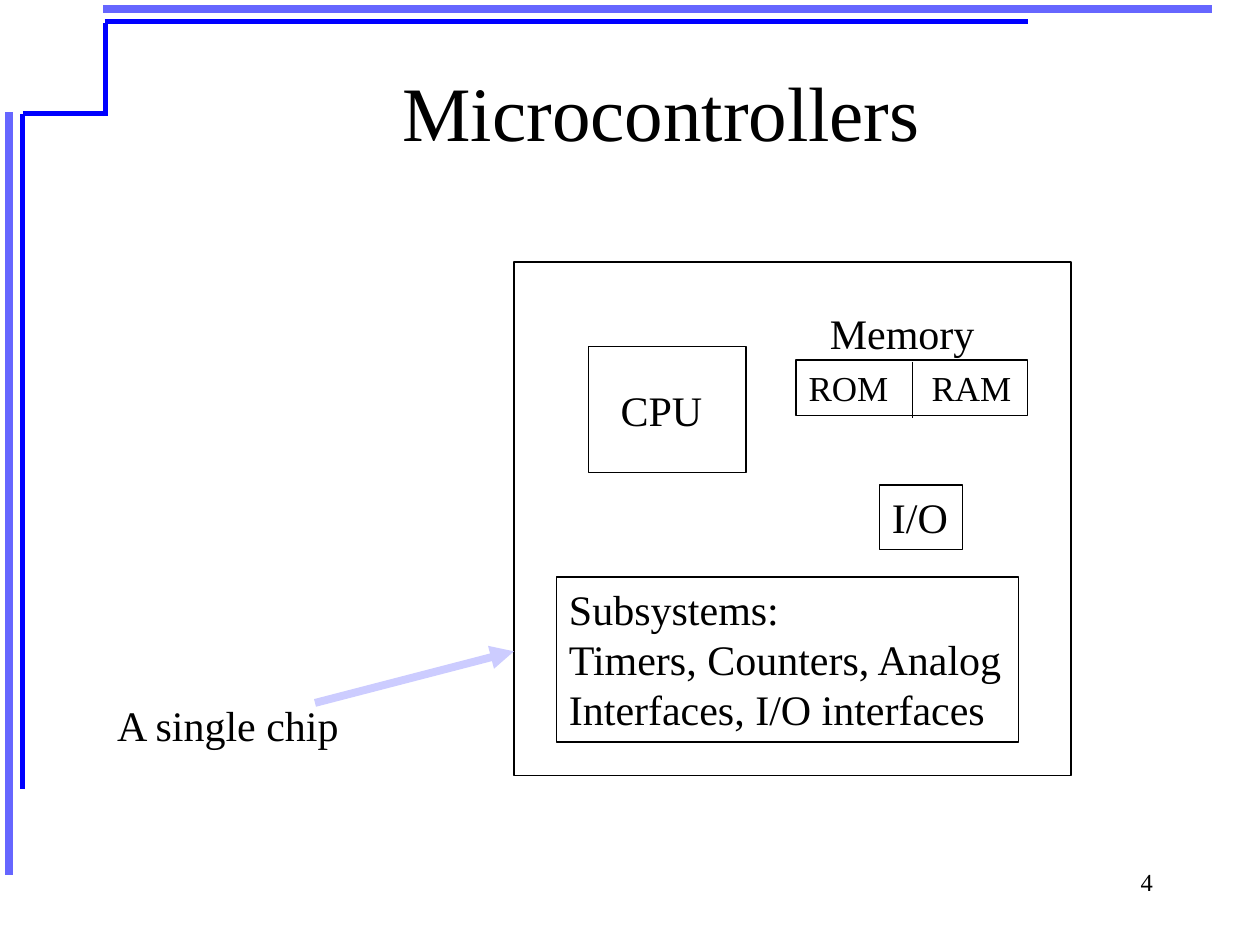
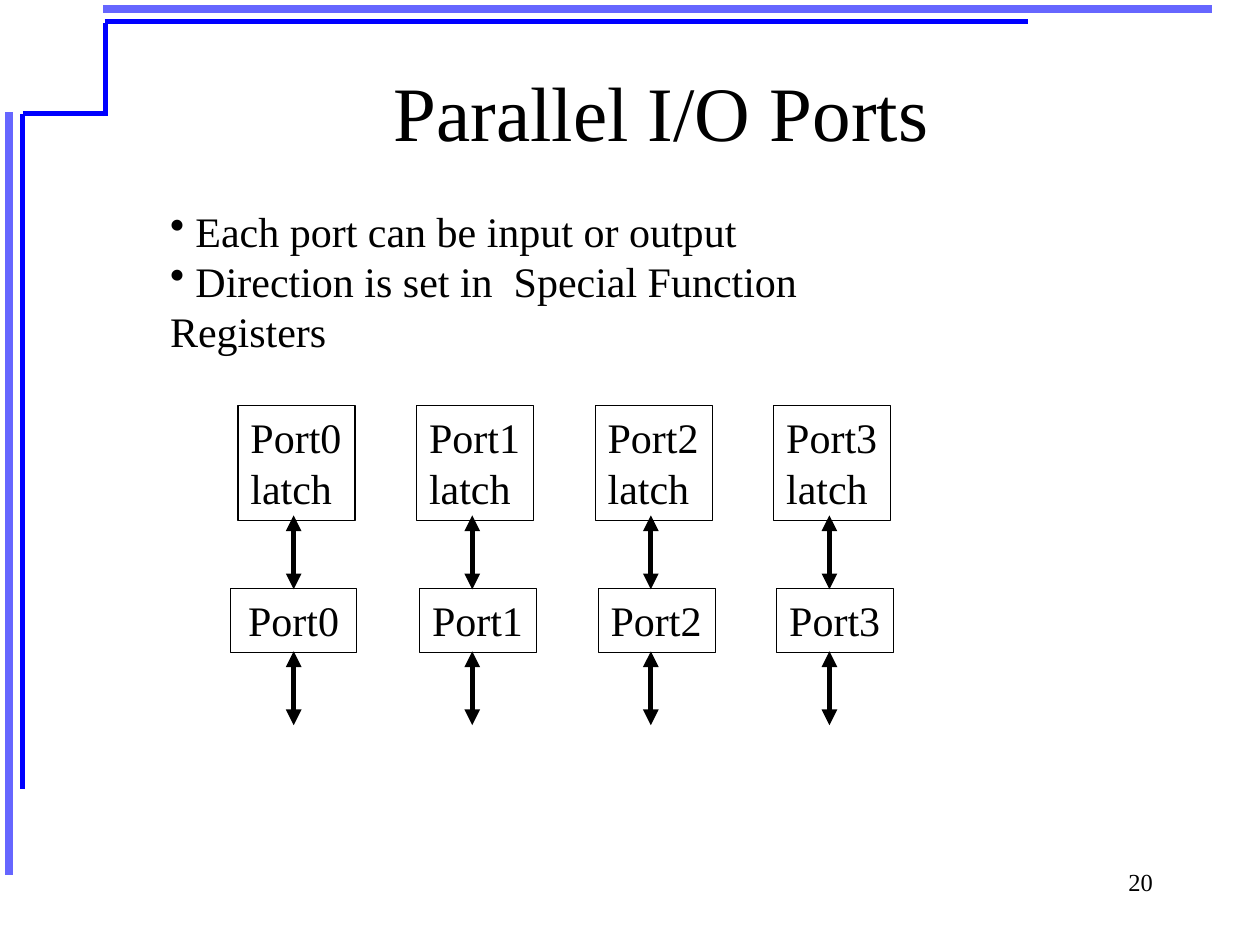
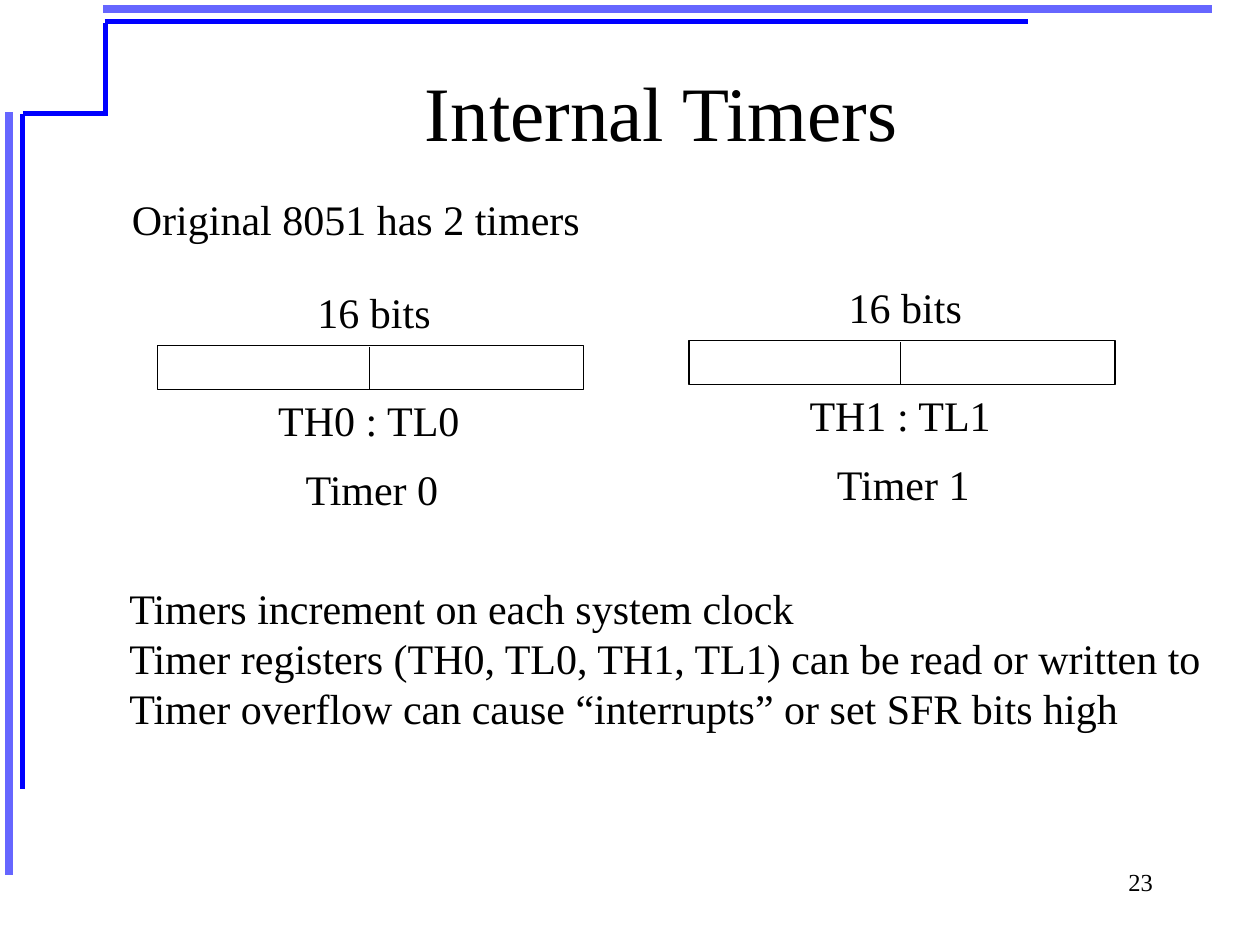
from lxml import etree
from pptx import Presentation
from pptx import util as u
from pptx.dml.color import RGBColor
from pptx.enum import shapes, text
from pptx.oxml import ns

BLACK = RGBColor(0x00, 0x00, 0x00)
BLUE = RGBColor(0x00, 0x00, 0xFF)
PERIWINKLE = RGBColor(0x66, 0x66, 0xFF)
LAVENDER = RGBColor(0xCC, 0xCC, 0xFF)
FONT = "Times New Roman"
LEFT, CENTER, RIGHT = text.PP_ALIGN.LEFT, text.PP_ALIGN.CENTER, text.PP_ALIGN.RIGHT

FRAME = [
    ((0.18, 2.26), (0.18, 17.63), PERIWINKLE, 4.5),
    ((2.08, 0.18), (24.43, 0.18), PERIWINKLE, 4.5),
    ((0.46, 2.29), (0.46, 15.9), BLUE, 3),
    ((2.11, 0.43), (20.73, 0.43), BLUE, 3),
    ((0.46, 2.29), (2.16, 2.29), BLUE, 3),
    ((2.13, 2.34), (2.13, 0.46), BLUE, 3),
]


def assign(target, values):
    for attribute, value in values.items():
        setattr(target, attribute, value)


def draw_line(slide, start, end, color=BLACK, weight=0.75, arrows=()):
    ends = [u.Cm(value) for value in (*start, *end)]
    connector = slide.shapes.add_connector(shapes.MSO_CONNECTOR.STRAIGHT, *ends)
    connector.line.width = u.Pt(weight)
    connector.line.color.rgb = color
    properties = connector.element.spPr
    outline = properties.find(ns.qn("a:ln"))
    for arrow in arrows:
        etree.SubElement(outline, ns.qn(f"a:{arrow}"), type="triangle")
    etree.SubElement(properties, ns.qn("a:effectLst"))
    return connector


def draw_rectangle(slide, box):
    rectangle = slide.shapes.add_shape(
        shapes.MSO_SHAPE.RECTANGLE, *[u.Cm(value) for value in box])
    rectangle.shadow.inherit = False
    rectangle.fill.background()
    rectangle.line.width = u.Pt(0.75)
    rectangle.line.color.rgb = BLACK
    return rectangle


def set_text(frame, lines, size=24, align=LEFT, wrap=False,
             anchor=text.MSO_ANCHOR.TOP, bullet=None, tab=None):
    assign(frame, {"text": "\n".join(lines), "word_wrap": wrap, "vertical_anchor": anchor})
    for paragraph in frame.paragraphs:
        paragraph.alignment = align
        properties = paragraph._p.get_or_add_pPr()
        if bullet:
            etree.SubElement(properties, ns.qn("a:buChar"), char=bullet)
        if tab:
            stops = etree.SubElement(properties, ns.qn("a:tabLst"))
            etree.SubElement(stops, ns.qn("a:tab"), pos=str(u.Cm(tab)), algn="l")
        assign(paragraph.font, {"name": FONT, "size": u.Pt(size)})
        paragraph.font.color.rgb = BLACK


def add_label(slide, box, *lines, **style):
    label = slide.shapes.add_textbox(*[u.Cm(value) for value in box])
    set_text(label.text_frame, lines, **style)


def add_block(slide, box, *lines, **style):
    set_text(draw_rectangle(slide, box).text_frame, lines, **style)


def add_frame(layout, slide):
    for number, (start, end, color, weight) in enumerate(FRAME, 100):
        bar = draw_line(slide, start, end, color, weight).element
        bar.nvCxnSpPr.cNvPr.set("id", str(number))
        layout.element.cSld.spTree.append(bar)


def start_slide(deck, layout, heading, page):
    slide = deck.slides.add_slide(layout)
    title = slide.shapes.title
    assign(title, {"left": u.Cm(2.54), "top": u.Cm(0.64),
                   "width": u.Cm(21.59), "height": u.Cm(3.18)})
    set_text(title.text_frame, [heading], size=44, align=CENTER, wrap=True,
             anchor=text.MSO_ANCHOR.MIDDLE)
    add_label(slide, (18.21, 17.35, 5.28, 1.27), page, size=14, align=RIGHT, wrap=True)
    return slide


def draw_chip(slide, left, top, width, height):
    draw_rectangle(slide, (left, top, width, height))
    draw_rectangle(slide, (left + 1.5, top + 1.7, 3.18, 2.54))
    add_label(slide, (left + 1.9, top + 2.34, 2.16, 1.27), "CPU")
    add_label(slide, (left + 6.12, top + 0.79, 3.43, 1.27), "Memory")
    add_block(slide, (left + 5.69, top + 1.98, 4.67, 1.12), "ROM\tRAM",
              size=20, wrap=True, tab=2.48)
    divider = left + 8.03
    draw_line(slide, (divider, top + 2.01), (divider, top + 3.15))
    add_block(slide, (left + 7.37, top + 4.5, 1.68, 1.3), "I/O")
    add_block(slide, (left + 0.86, top + 6.35, 9.32, 3.33), "Subsystems:",
              "Timers, Counters, Analog", "Interfaces, I/O interfaces")


def draw_port(slide, number, left, top):
    name = f"Port{number}"
    add_block(slide, (left, top, 2.36, 2.31), name, "latch")
    if number == 0:
        add_block(slide, (left - 0.15, top + 3.68, 2.54, 1.3), name, align=CENTER, wrap=True)
    else:
        add_block(slide, (left + 0.06, top + 3.68, 2.36, 1.3), name)
    axis = left + 1.12
    for arrow_top in (top + 2.21, top + 4.95):
        draw_line(slide, (axis, arrow_top), (axis, arrow_top + 1.49),
                  weight=3, arrows=("headEnd", "tailEnd"))


def draw_timer(slide, number, left, top):
    draw_rectangle(slide, (left, top, 8.59, 0.89))
    draw_line(slide, (left + 4.27, top + 0.04), (left + 4.27, top + 0.89))
    add_label(slide, (left + 2.97, top - 1.3, 2.79, 1.27), "16 bits")
    add_label(slide, (left + 2.18, top + 0.86, 4.17, 1.27), f"TH{number} : TL{number}")
    add_label(slide, (left + 2.72, top + 2.26, 3.2, 1.27), f"Timer {number}", align=CENTER)


def build_microcontrollers(slide):
    draw_chip(slide, 10.36, 5.28, 11.23, 10.36)
    draw_line(slide, (6.35, 14.17), (10.36, 13.13), LAVENDER, 4.5, ("tailEnd",))
    add_label(slide, (2.11, 13.97, 6.81, 1.27), "A single chip", wrap=True)


def build_ports(slide):
    for number in range(4):
        draw_port(slide, number, 4.8 + 3.6 * number, 8.18)
    add_label(slide, (3.18, 4.01, 15.5, 3.3), " Each port can be input or output",
              " Direction is set in  Special Function Registers", wrap=True, bullet="•")


def build_timers(slide):
    add_label(slide, (2.41, 3.78, 9.53, 1.27), "Original 8051 has 2 timers")
    for number, corner in enumerate([(3.18, 6.96), (13.89, 6.86)]):
        draw_timer(slide, number, *corner)
    add_label(slide, (2.36, 11.61, 22.17, 3.3),
              "Timers increment on each system clock",
              "Timer registers (TH0, TL0, TH1, TL1) can be read or written to",
              "Timer overflow can cause “interrupts” or set SFR bits high")


def main():
    deck = Presentation()
    assign(deck, {"slide_width": u.Cm(25.4), "slide_height": u.Cm(19.05)})
    layout = deck.slide_layouts.get_by_name("Title Only")
    pages = [
        ("Microcontrollers", "4", build_microcontrollers),
        ("Parallel I/O Ports", "20", build_ports),
        ("Internal Timers", "23", build_timers),
    ]
    for heading, page, build in pages:
        build(start_slide(deck, layout, heading, page))
    add_frame(layout, deck.slides[0])
    deck.save("out.pptx")


if __name__ == "__main__":
    main()
